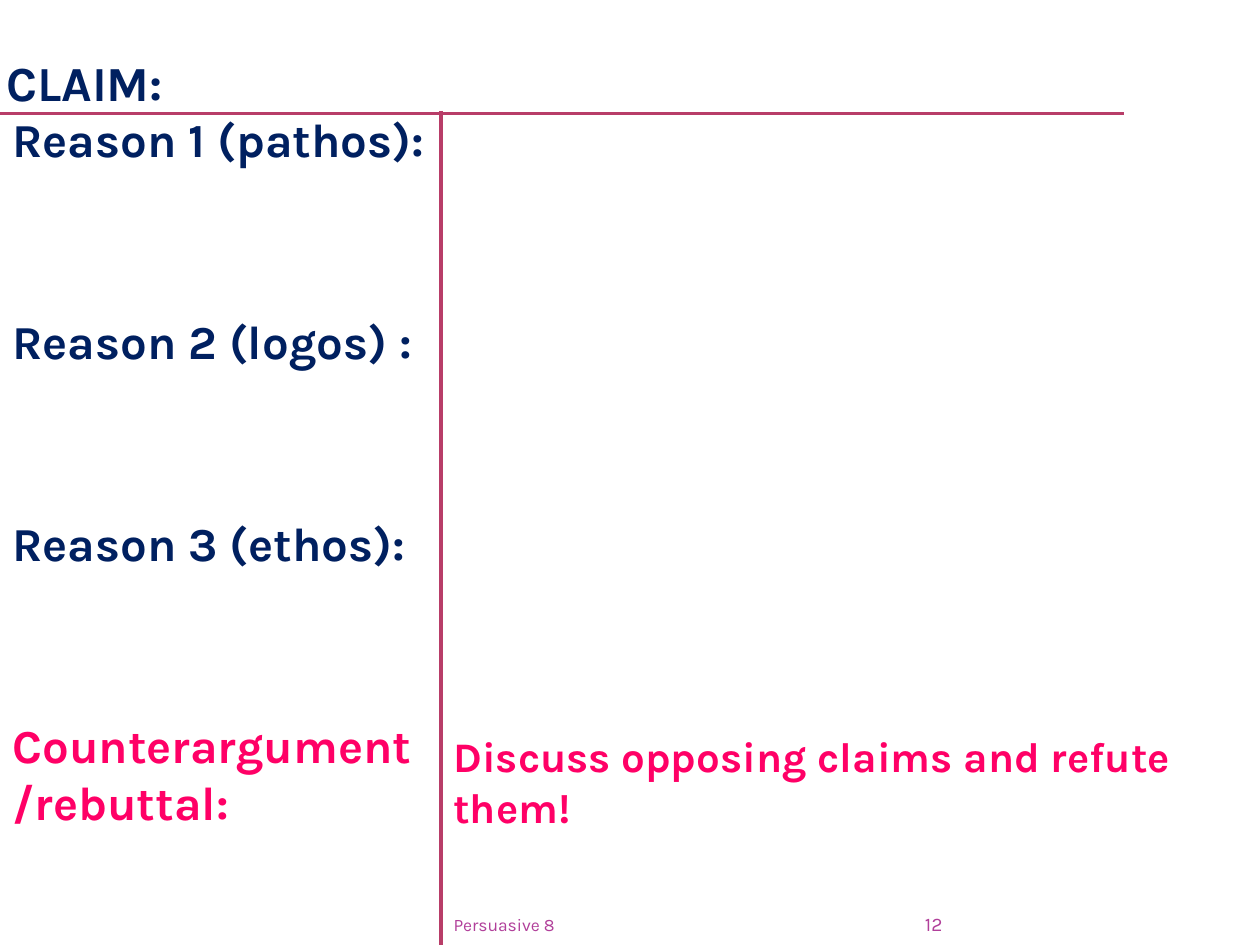
from lxml import etree
from pptx import Presentation
from pptx.dml.color import RGBColor
from pptx.enum.shapes import MSO_CONNECTOR
from pptx.enum.text import MSO_ANCHOR, PP_ALIGN
from pptx.oxml.ns import qn
from pptx.util import Inches, Pt

FONT = "Karla"
COLORS = {"white": "FFFFFF", "navy": "002060", "pink": "FF0066",
          "rule": "B83D68", "footer": "B13F9A"}
LEFT, RIGHT = PP_ALIGN.LEFT, PP_ALIGN.RIGHT
TOP, BOTTOM = MSO_ANCHOR.TOP, MSO_ANCHOR.BOTTOM
STRAIGHT = MSO_CONNECTOR.STRAIGHT
DIVIDER_X = 3.5


def rgb(name):
    return RGBColor.from_string(COLORS[name])


def add_text(page, area, lines, size, bold=False, align=LEFT, anchor=TOP,
             insets=(0.1, 0.05, 0.1, 0.05), gap=0, fill=None):
    """Add a box of (text, color) paragraphs, with gap points between them."""
    box = page.shapes.add_textbox(*map(Inches, area))
    if fill:
        box.fill.solid()
        box.fill.fore_color.rgb = rgb(fill)
    frame = box.text_frame
    frame.word_wrap = True
    frame.vertical_anchor = anchor
    (frame.margin_left, frame.margin_top,
     frame.margin_right, frame.margin_bottom) = map(Inches, insets)
    for index, (text, color) in enumerate(lines):
        para = frame.add_paragraph() if index else frame.paragraphs[0]
        para.text = text
        para.alignment = align
        if index:
            para.space_before = Pt(gap)
        para.font.name = FONT
        para.font.size = Pt(size)
        para.font.bold = bold
        para.font.color.rgb = rgb(color)


def add_rule(page, start, end):
    rule = page.shapes.add_connector(STRAIGHT, *map(Inches, start + end))
    rule.line.color.rgb = rgb("rule")
    rule.line.width = Pt(2)
    etree.SubElement(rule._element.spPr, qn("a:effectLst"))


def main():
    deck = Presentation()
    deck.slide_width, deck.slide_height = Inches(10), Inches(7.5)
    page = deck.slides.add_slide(deck.slide_layouts[6])

    add_text(page, (0, 0, 10, 0.88), [("CLAIM:", "navy")], 28, bold=True,
             anchor=BOTTOM, insets=(0.05, 0, 0.05, 0), fill="white")
    labels = [("Reason 1 (pathos):", "navy"), ("Reason 2 (logos) :", "navy"),
              ("Reason 3 (ethos):", "navy"),
              ("Counterargument/rebuttal:", "pink")]
    add_text(page, (0, 0.83, DIVIDER_X, 6.67), labels, 27, bold=True,
             gap=83, fill="white")
    add_text(page, (DIVIDER_X, 0.92, 6.5, 6.42),
             [("Discuss opposing claims and refute them!", "pink")], 24,
             bold=True, insets=(0.1, 4.88, 0.1, 0.05), fill="white")

    add_text(page, (6.84, 7.17, 0.64, 0.25), [("12", "footer")], 11,
             align=RIGHT, anchor=BOTTOM, insets=(0, 0, 0, 0))
    add_rule(page, (0, 0.9), (8.92, 0.9))
    add_rule(page, (DIVIDER_X, 0.88), (DIVIDER_X, 7.5))
    add_text(page, (0.5, 7.17, 4, 0.25), [("Persuasive 8", "footer")], 10,
             align=RIGHT, anchor=BOTTOM, insets=(0.1, 0, 0.1, 0))

    deck.save("out.pptx")


if __name__ == "__main__":
    main()
